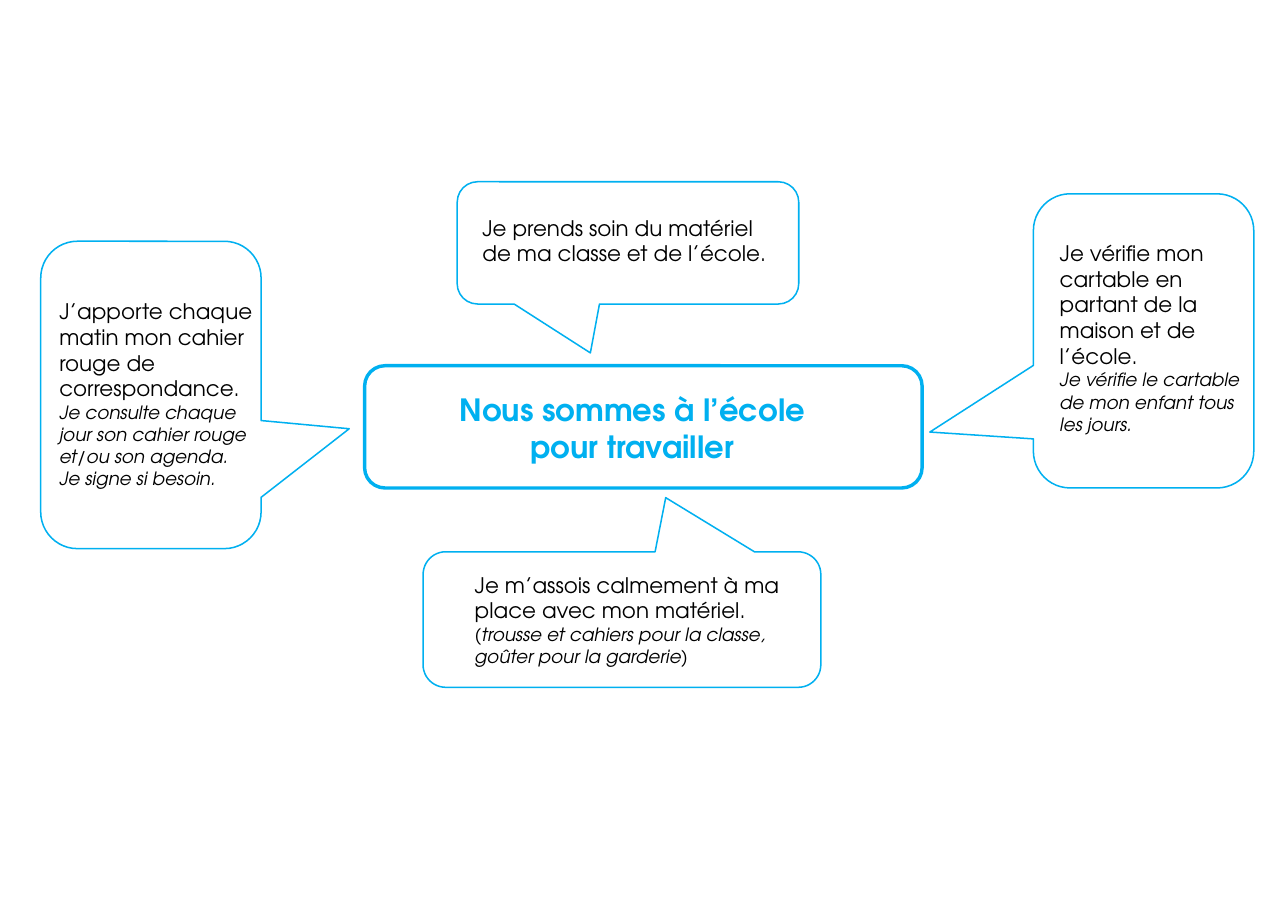
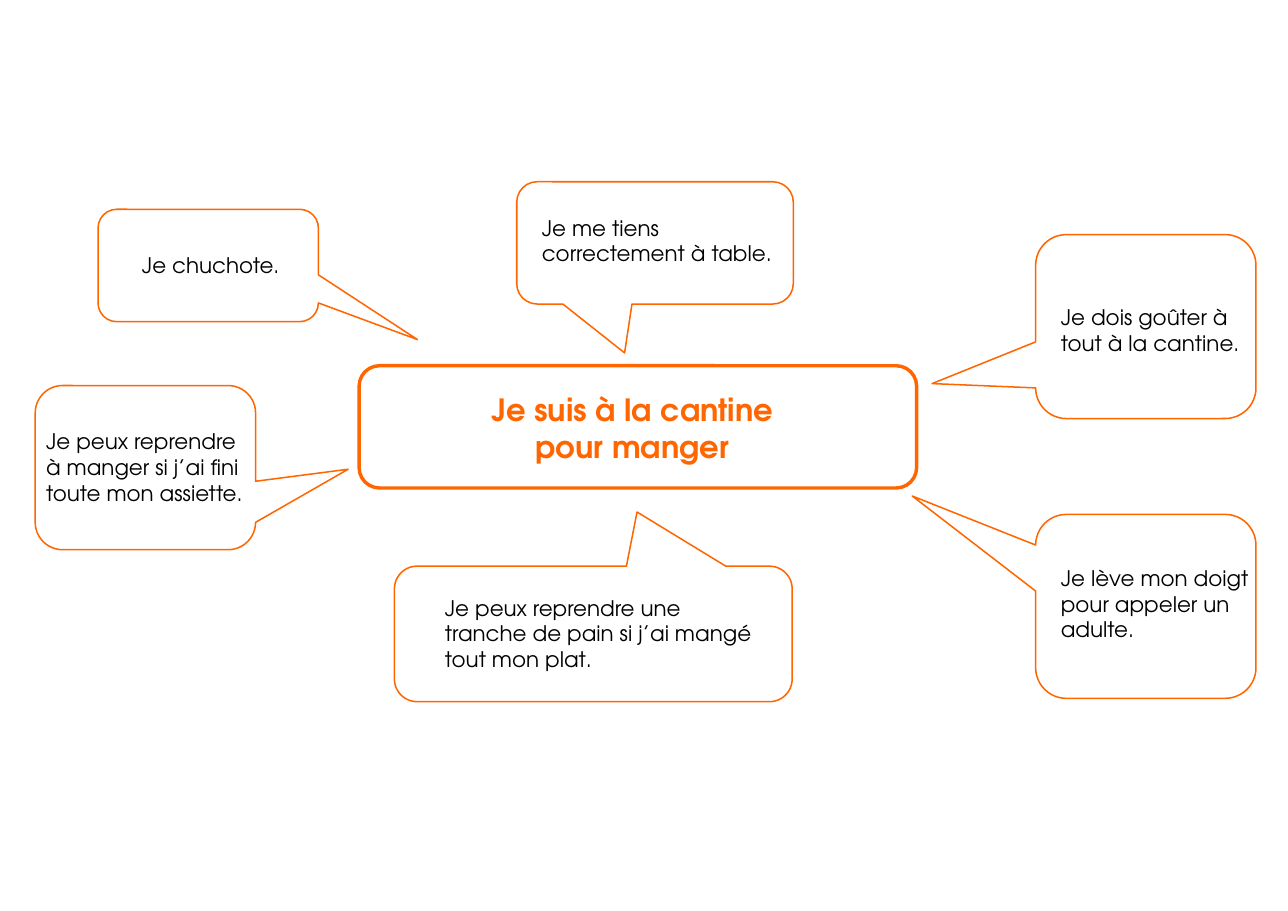
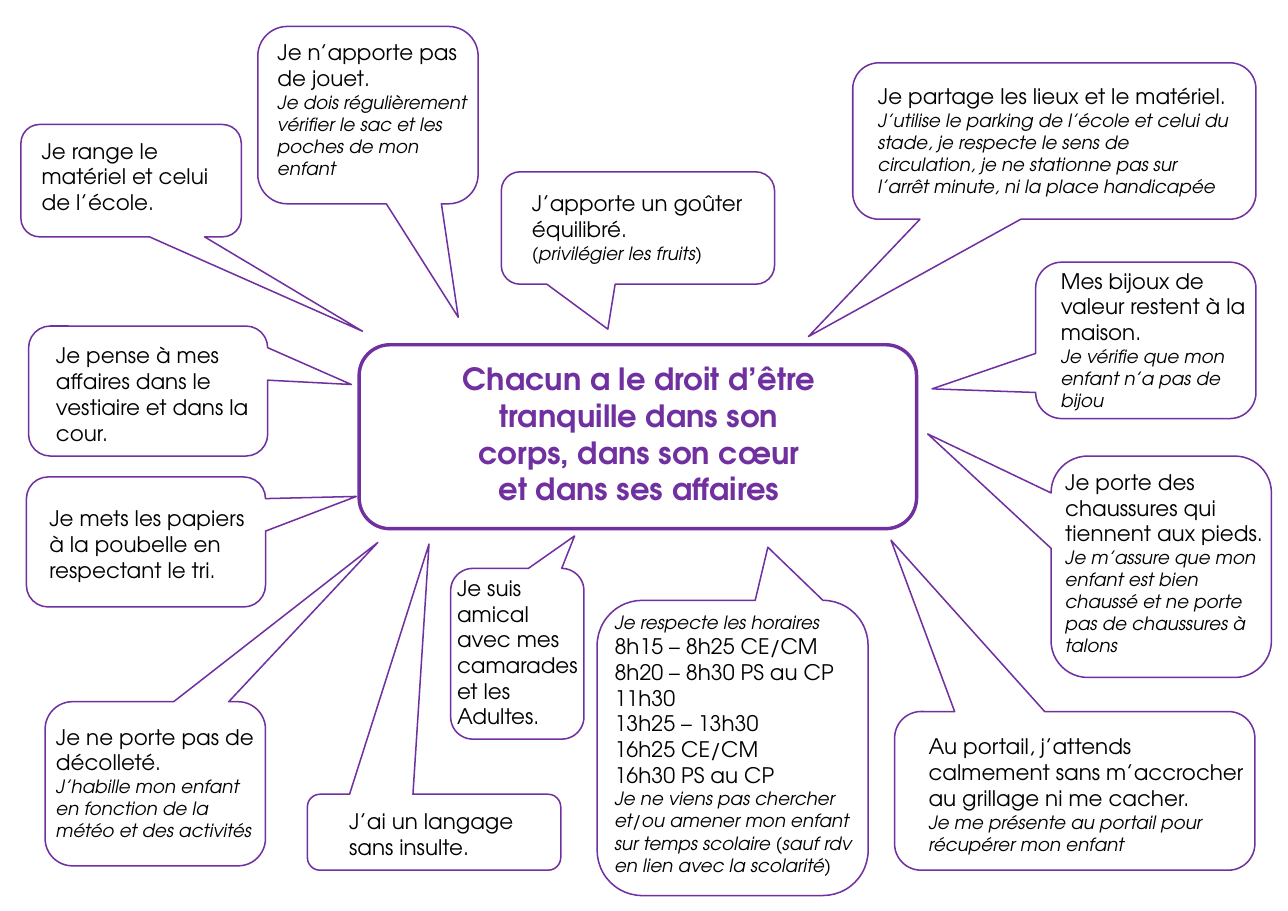
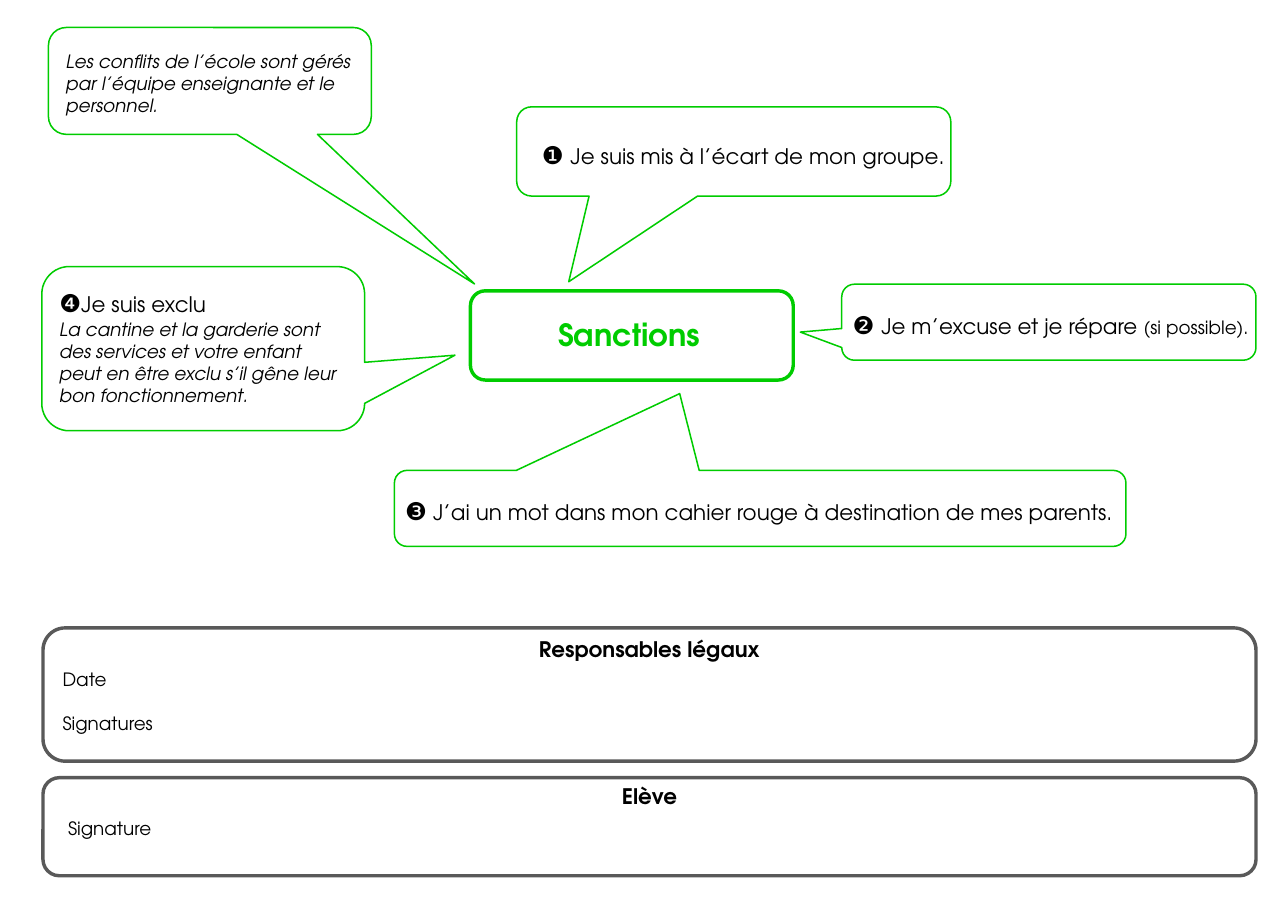
from pptx import Presentation
from pptx import util as u
from pptx.dml.color import RGBColor
from pptx.enum import shapes, text

FONT = "TeX Gyre Adventor"
BLUE = RGBColor(0x00, 0xB0, 0xF0)
ORANGE = RGBColor(0xFF, 0x66, 0x00)
PURPLE = RGBColor(0x70, 0x30, 0xA0)
GREEN = RGBColor(0x00, 0xCC, 0x00)
GREY = RGBColor(0x59, 0x59, 0x59)
BLACK = RGBColor(0x00, 0x00, 0x00)
ROUND = shapes.MSO_SHAPE.ROUNDED_RECTANGLE
CALLOUT = shapes.MSO_SHAPE.ROUNDED_RECTANGULAR_CALLOUT
LEFT = text.PP_ALIGN.LEFT
CENTER = text.PP_ALIGN.CENTER


def rule(words):
    """Return a paragraph that states a rule for the pupil."""
    return [(words, 14, False)]


def note(words):
    """Return a paragraph in small italics for the parents."""
    return [(words, 12, True)]


def step(mark, words, extra=""):
    """Return a paragraph that opens with a circled number."""
    runs = [(mark, 16, False), (words, 14, False)]
    return runs + [(extra, 12, False)] if extra else runs


def inches(box):
    """Turn a box of plain numbers into lengths."""
    return [u.Inches(n) for n in box]


def inside(box, area):
    """Shift an area by the corner of its box."""
    return (box[0] + area[0], box[1] + area[1], area[2], area[3])


def outline(slide, kind, box, hue, width):
    """Draw an unfilled shape with a coloured line."""
    shape = slide.shapes.add_shape(kind, *inches(box))
    shape.shadow.inherit = False
    shape.fill.background()
    shape.line.color.rgb = hue
    shape.line.width = u.Pt(width)
    return shape


def write(slide, box, paras, hue=BLACK, bold=False, align=LEFT, gap=0):
    """Write paragraphs made of (words, size, italic) runs."""
    frame = slide.shapes.add_textbox(*inches(box)).text_frame
    frame.word_wrap = True
    frame.auto_size = text.MSO_AUTO_SIZE.SHAPE_TO_FIT_TEXT
    for i, runs in enumerate(paras):
        para = frame.add_paragraph() if i else frame.paragraphs[0]
        para.alignment = align
        if i and gap:
            para.space_before = u.Pt(gap)
        for words, size, slant in runs:
            run = para.add_run()
            run.text = words
            font = run.font
            font.name, font.size = FONT, u.Pt(size)
            font.bold, font.italic = bold, slant
            font.color.rgb = hue


def hub(slide, hue, box, area, title):
    """Draw the central frame and its title."""
    outline(slide, ROUND, box, hue, 2.25)
    write(slide, inside(box, area), [[(title, 20, False)]], hue, True, CENTER)


def bubble(slide, hue, box, tail, area, *paras):
    """Draw a speech bubble whose tail is a share of its size from its centre."""
    shape = outline(slide, CALLOUT, box, hue, 1)
    shape.adjustments[0], shape.adjustments[1] = tail
    write(slide, inside(box, area), paras)


def panel(slide, box, head, title, area, *rows):
    """Draw a signature frame with a heading and its rows."""
    outline(slide, ROUND, box, GREY, 2.25)
    write(slide, inside(box, (0, head, box[2], 0.34)), [rule(title)],
          bold=True, align=CENTER)
    write(slide, inside(box, area), [[(row, 12, False)] for row in rows],
          gap=14.4)


def page(deck, hue, box, area, title, bubbles):
    """Add a slide with a central frame and the bubbles around it."""
    slide = deck.slides.add_slide(deck.slide_layouts[6])
    hub(slide, hue, box, area, title)
    for item in bubbles:
        bubble(slide, hue, *item)
    return slide


def work(deck):
    """Build the slide about working at school."""
    page(deck, BLUE, (3.31, 3.32, 5.06, 1.11), (0.72, 0.18, 3.42, 0.77),
         "Nous sommes à l’école pour travailler", [
        ((0.37, 2.19, 2, 2.79), (0.9, 0.11), (0.07, 0.47, 2, 1.85),
         rule("J’apporte chaque matin mon cahier rouge de correspondance."),
         note("Je consulte chaque jour son cahier rouge et/ou son agenda."),
         note("Je signe si besoin.")),
        ((3.84, 5.01, 3.61, 1.23), (0.11, -0.9), (0.37, 0.13, 3.35, 0.98),
         rule("Je m’assois calmement à ma place avec mon matériel."),
         note("(trousse et cahiers pour la classe, goûter pour la garderie)")),
        ((9.38, 1.76, 2, 2.67), (-0.97, 0.31), (0.14, 0.37, 2, 2.09),
         rule("Je vérifie mon cartable en partant de la maison et de l’école."),
         note("Je vérifie le cartable de mon enfant tous les jours.")),
        ((4.15, 1.65, 3.1, 1.11), (-0.11, 0.9), (0.13, 0.25, 2.8, 0.57),
         rule("Je prends soin du matériel de ma classe et de l’école.")),
    ])


def lunch(deck):
    """Build the slide about the canteen."""
    page(deck, ORANGE, (3.26, 3.32, 5.06, 1.11), (0.77, 0.18, 3.42, 0.77),
         "Je suis à la cantine pour manger", [
        ((0.32, 3.5, 2, 1.49), (0.92, 0.01), (0, 0.34, 2, 0.81),
         rule("Je peux reprendre à manger si j’ai fini toute mon assiette.")),
        ((3.58, 5.14, 3.61, 1.23), (0.11, -0.9), (0.36, 0.21, 3.03, 0.81),
         rule("Je peux reprendre une tranche de pain si j’ai mangé "
              "tout mon plat.")),
        ((9.4, 2.13, 2, 1.67), (-0.97, 0.31), (0.13, 0.58, 2, 0.77),
         rule("Je dois goûter à tout à la cantine.")),
        ((4.69, 1.65, 2.51, 1.11), (-0.11, 0.9), (0.13, 0.25, 2.37, 0.57),
         rule("Je me tiens correctement à table.")),
        ((0.89, 1.9, 2, 1.02), (0.95, 0.66), (0.3, 0.34, 2, 0.34),
         rule("Je chuchote.")),
        ((9.4, 4.67, 2, 1.67), (-1.06, -0.6), (0.13, 0.41, 2, 1.01),
         rule("Je lève mon doigt pour appeler un adulte.")),
    ])


def calm(deck):
    """Build the slide about respect for everyone."""
    page(deck, PURPLE, (3.26, 3.13, 5.06, 1.67), (0.83, 0.09, 3.42, 1.45),
         "Chacun a le droit d’être tranquille dans son corps, "
         "dans son cœur et dans ses affaires", [
        ((0.24, 4.33, 2.17, 1.18), (0.88, -0.35), (0.11, 0.21, 2, 0.81),
         rule("Je mets les papiers à la poubelle en respectant le tri.")),
        ((5.42, 5.45, 2.46, 2.68), (0.13, -0.68), (0.06, 0.05, 2.46, 2.52),
         note("Je respecte les horaires"),
         rule("8h15 – 8h25 CE/CM"),
         rule("8h20 – 8h30 PS au CP"),
         rule("11h30"),
         rule("13h25 – 13h30"),
         rule("16h25 CE/CM"),
         rule("16h30 PS au CP"),
         note("Je ne viens pas chercher et/ou amener mon enfant sur temps "
              "scolaire (sauf rdv en lien avec la scolarité)")),
        ((9.4, 2.38, 2, 1.42), (-0.97, 0.31), (0.13, 0, 2, 1.62),
         rule("Mes bijoux de valeur restent à la maison."),
         note("Je vérifie que mon enfant n’a pas de bijou")),
        ((4.55, 1.56, 2.48, 1.02), (-0.11, 0.9), (0.18, 0.12, 2.26, 0.77),
         rule("J’apporte un goûter équilibré."),
         note("(privilégier les fruits)")),
        ((2.34, 0.24, 2, 1.61), (0.41, 1.14), (0.08, 0.07, 2, 1.38),
         rule("Je n’apporte pas de jouet."),
         note("Je dois régulièrement vérifier le sac et les poches "
              "de mon enfant")),
        ((9.54, 4.14, 2, 2.01), (-1.06, -0.6), (0.03, 0.07, 2, 2.26),
         rule("Je porte des chaussures qui tiennent aux pieds."),
         note("Je m’assure que mon enfant est bien chaussé et ne porte pas "
              "de chaussures à talons")),
        ((7.74, 0.57, 3.66, 1.42), (-0.61, 1.25), (0.13, 0.14, 3.41, 1.14),
         rule("Je partage les lieux et le matériel."),
         note("J’utilise le parking de l’école et celui du stade, je respecte "
              "le sens de circulation, je ne stationne pas sur l’arrêt "
              "minute, ni la place handicapée")),
        ((8.12, 6.46, 3.27, 1.44), (-0.51, -1.58), (0.21, 0.15, 3.07, 1.65),
         rule("Au portail, j’attends calmement sans m’accrocher au grillage "
              "ni me cacher."),
         note("Je me présente au portail pour récupérer mon enfant")),
        ((4.09, 5.16, 1.21, 1.55), (0.43, -0.69), (-0.04, 0.01, 1.47, 1.51),
         rule("Je suis amical"),
         rule("avec mes camarades et les"),
         rule("Adultes.")),
        ((2.79, 7.21, 2.3, 0.69), (-0.02, -3.79), (0.28, 0.08, 2.09, 0.57),
         rule("J’ai un langage sans insulte.")),
        ((0.41, 6.37, 2, 1.49), (1.01, -1.47), (0, 0.15, 2, 1.18),
         rule("Je ne porte pas de décolleté."),
         note("J’habille mon enfant en fonction de la météo "
              "et des activités")),
        ((0.26, 2.96, 2.17, 1.18), (0.85, -0.05), (0.15, 0.1, 2, 1.04),
         rule("Je pense à mes affaires dans le vestiaire et dans la cour.")),
        ((0.19, 1.13, 2, 1.02), (1.05, 1.34), (0.09, 0.07, 2, 0.81),
         rule("Je range le matériel et celui de l’école.")),
    ])


def outcome(deck):
    """Build the slide about sanctions and signatures."""
    slide = page(deck, GREEN, (4.27, 2.64, 2.93, 0.81),
                 (-0.27, 0.18, 3.42, 0.44), "Sanctions", [
        ((0.38, 2.42, 2.93, 1.49), (0.78, 0.04), (0.06, 0.15, 2.82, 1.18),
         step("❹", "Je suis exclu"),
         note("La cantine et la garderie sont des services et votre enfant "
              "peut en être exclu s’il gêne leur bon fonctionnement.")),
        ((3.58, 4.27, 6.64, 0.69), (-0.11, -1.51), (0, 0.18, 6.64, 0.37),
         step("❸", " J’ai un mot dans mon cahier rouge à destination "
              "de mes parents.")),
        ((7.64, 2.58, 3.76, 0.69), (-0.6, 0.13), (0, 0.19, 3.89, 0.57),
         step("❷ ", "Je m’excuse et je répare ", "(si possible).")),
        ((4.69, 0.97, 3.94, 0.81), (-0.38, 1.46), (0.13, 0.25, 4.44, 0.37),
         step("❶ ", "Je suis mis à l’écart de mon groupe.")),
        ((0.44, 0.25, 2.93, 0.97), (0.82, 1.9), (0.06, 0.16, 2.82, 0.71),
         note("Les conflits de l’école sont gérés par l’équipe enseignante "
              "et le personnel.")),
    ])
    panel(slide, (0.39, 5.7, 11.01, 1.21), 0.03, "Responsables légaux",
          (0.08, 0.32, 10.9, 0.71), "Date", "Signatures")
    panel(slide, (0.39, 7.06, 11.01, 0.89), 0, "Elève",
          (0.13, 0.31, 10.8, 0.3), "Signature")


def main():
    """Build and save the deck."""
    deck = Presentation()
    deck.slide_width, deck.slide_height = inches((11.69, 8.27))
    for build in (work, lunch, calm, outcome):
        build(deck)
    deck.save("out.pptx")


if __name__ == "__main__":
    main()
